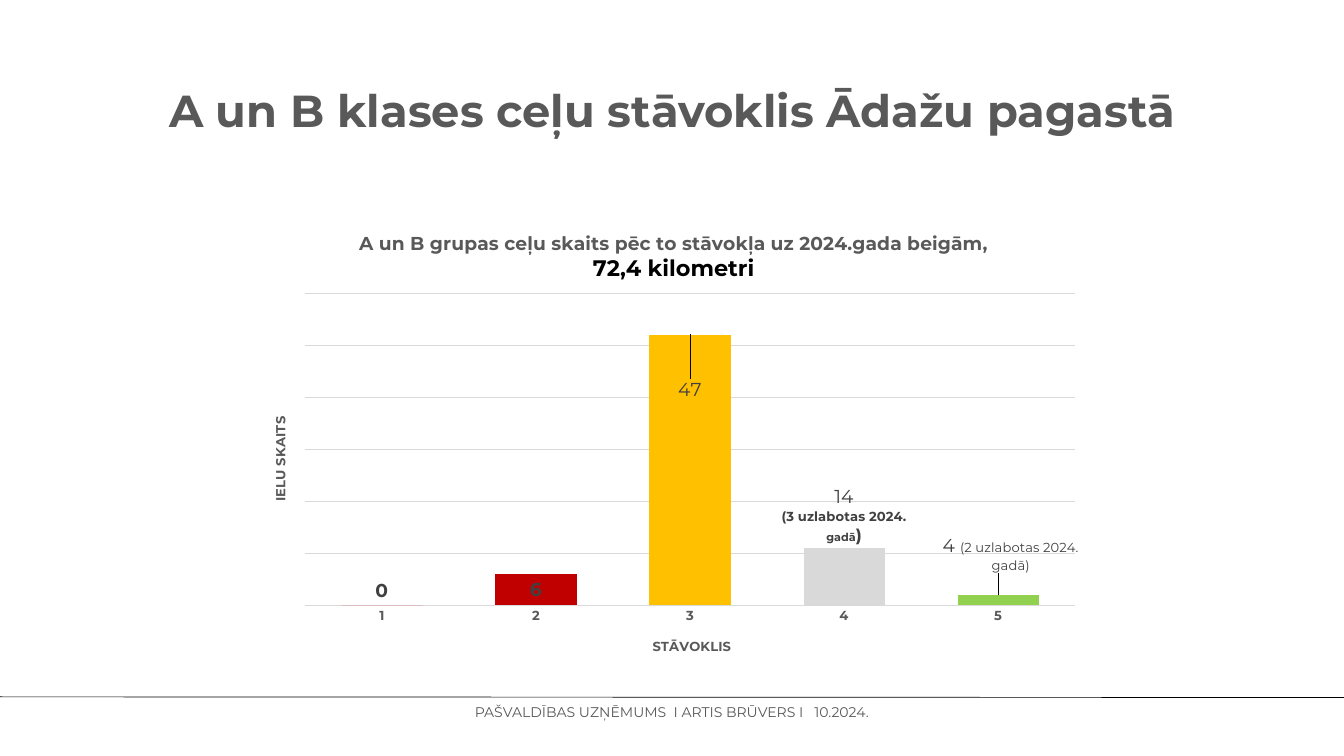
from lxml import etree
from pptx import Presentation
from pptx import util as u
from pptx.chart import data as chart_data
from pptx.dml.color import RGBColor
from pptx.enum import chart as charts, shapes, text
from pptx.oxml import ns

COLORS = {
    "text": "595959", "label": "404040", "black": "000000", "grid": "D9D9D9",
    "1": "FF0000", "2": "C00000", "3": "FFC000", "4": "D9D9D9", "5": "92D050",
}
FONT = "Montserrat"


def write(paragraph, content, size=14, bold=False, color="text"):
    run = paragraph.add_run()
    run.text = content
    run.font.name = FONT
    run.font.size = u.Pt(size)
    run.font.bold = bold
    run.font.color.rgb = RGBColor.from_string(COLORS[color])


def place(element, index, **values):
    for old in element.findall(ns.qn("c:layout")):
        element.remove(old)
    layout = etree.Element(ns.qn("c:layout"))
    manual = etree.SubElement(layout, ns.qn("c:manualLayout"))
    for name, value in values.items():
        etree.SubElement(manual, ns.qn(f"c:{name}")).set("val", str(value))
    element.insert(index, layout)


presentation = Presentation()
presentation.slide_width = u.Inches(20)
presentation.slide_height = u.Inches(11.25)
slide = presentation.slides.add_slide(presentation.slide_layouts[5])

title = slide.shapes.title
title.left, title.top = u.Inches(1.38), u.Inches(0.6)
title.width, title.height = u.Inches(17.25), u.Inches(2.17)
title.text_frame.vertical_anchor = text.MSO_ANCHOR.MIDDLE
paragraph = title.text_frame.paragraphs[0]
paragraph.alignment = text.PP_ALIGN.CENTER
paragraph.line_spacing = 0.9
write(paragraph, "A un B klases ceļu stāvoklis Ādažu pagastā", size=48, bold=True)

road_data = chart_data.CategoryChartData()
road_data.categories = ["1", "2", "3", "4", "5"]
road_data.add_series("Series 1", [0, 6, 52, 11, 2])
chart = slide.shapes.add_chart(
    charts.XL_CHART_TYPE.COLUMN_CLUSTERED,
    u.Inches(3.75), u.Inches(3.2), u.Inches(12.5), u.Inches(6.75), road_data,
).chart
chart.has_legend = False
chart.font.name = FONT
chart.font.size = u.Pt(14)
chart.font.color.rgb = RGBColor.from_string(COLORS["text"])
place(chart.plots[0]._element.getparent(), 0, layoutTarget="inner",
      xMode="edge", yMode="edge", x=0.063, y=0.172, w=0.917, h=0.688)

heading = chart.chart_title.text_frame
write(heading.paragraphs[0], "A un B grupas ceļu skaits pēc to stāvokļa uz 2024.gada beigām,",
      size=20, bold=True)
write(heading.add_paragraph(), "72,4 kilometri", size=24, bold=True, color="black")
place(chart.chart_title._element, 1, xMode="edge", yMode="edge", x=0.125, y=0.03)

category_axis, value_axis = chart.category_axis, chart.value_axis
category_axis.major_tick_mark = charts.XL_TICK_MARK.NONE
category_axis.format.line.fill.background()
category_axis.tick_labels.font.size = u.Pt(14)
category_axis.tick_labels.font.bold = True
value_axis.minimum_scale, value_axis.maximum_scale = 0, 60
value_axis.major_unit = 10
value_axis.visible = False
gridline = value_axis.major_gridlines.format.line
gridline.color.rgb = RGBColor.from_string(COLORS["grid"])
gridline.width = u.Pt(0.75)
for axis, name, x, y in [(category_axis, "STĀVOKLIS", 0.474, 0.925),
                         (value_axis, "IELU SKAITS", 0.02, 0.439)]:
    write(axis.axis_title.text_frame.paragraphs[0], name, bold=True)
    place(axis.axis_title._element, 1, xMode="edge", yMode="edge", x=x, y=y)
turned = value_axis.axis_title.text_frame._txBody.bodyPr
turned.set("rot", "-5400000")
turned.set("vert", "horz")

plot = chart.plots[0]
plot.gap_width = 90
plot.vary_by_categories = False
series = plot.series[0]
for index, category in enumerate(plot.categories):
    fill = series.points[index].format.fill
    fill.solid()
    fill.fore_color.rgb = RGBColor.from_string(COLORS[category])

position = charts.XL_LABEL_POSITION
series.data_labels.show_value = True
series.data_labels.position = position.OUTSIDE_END
value_label = series.points[1].data_label
value_label.position = position.CENTER
for font in (series.data_labels.font, value_label.font):
    font.name = FONT
    font.size = u.Pt(20)
    font.bold = True
    font.color.rgb = RGBColor.from_string(COLORS["label"])

custom_labels = [
    (2, position.INSIDE_END, (0, 0.09), [[("47", 20, False)]]),
    (3, position.OUTSIDE_END, None,
     [[("14", 20, False)],
      [("(3 uzlabotas 2024. ", 14, True), ("gadā", 12, True), (")", 18, True)]]),
    (4, position.OUTSIDE_END, (0.015, -0.04),
     [[("4 ", 20, False), ("(2 uzlabotas 2024. gadā)", 14, False)]]),
]
for index, where, offset, lines in custom_labels:
    label = series.points[index].data_label
    frame = label.text_frame
    for number, line in enumerate(lines):
        paragraph = frame.add_paragraph() if number else frame.paragraphs[0]
        for content, size, bold in line:
            write(paragraph, content, size=size, bold=bold, color="label")
    label.position = where
    if offset:
        element = series._element.xpath(f'.//c:dLbl[c:idx/@val="{index}"]')[0]
        place(element, 1, x=offset[0], y=offset[1])

rule = slide.shapes.add_connector(
    shapes.MSO_CONNECTOR.STRAIGHT,
    u.Inches(-0.01), u.Inches(10.37), u.Inches(20.01), u.Inches(10.38))
rule.line.color.rgb = RGBColor.from_string(COLORS["black"])
rule.line.width = u.Pt(0.75)
etree.SubElement(rule._element.spPr, ns.qn("a:effectLst"))

footer = slide.shapes.add_textbox(
    u.Inches(0.1), u.Inches(10.47), u.Inches(19.8), u.Inches(0.25)).text_frame
footer.word_wrap = True
footer.auto_size = text.MSO_AUTO_SIZE.SHAPE_TO_FIT_TEXT
footer.margin_left = footer.margin_right = footer.margin_top = footer.margin_bottom = 0
paragraph = footer.paragraphs[0]
paragraph.alignment = text.PP_ALIGN.CENTER
paragraph.line_spacing = u.Pt(18)
write(paragraph, "PAŠVALDĪBAS UZŅĒMUMS  I ARTIS BRŪVERS I   10.2024.", size=15)

presentation.save("out.pptx")
